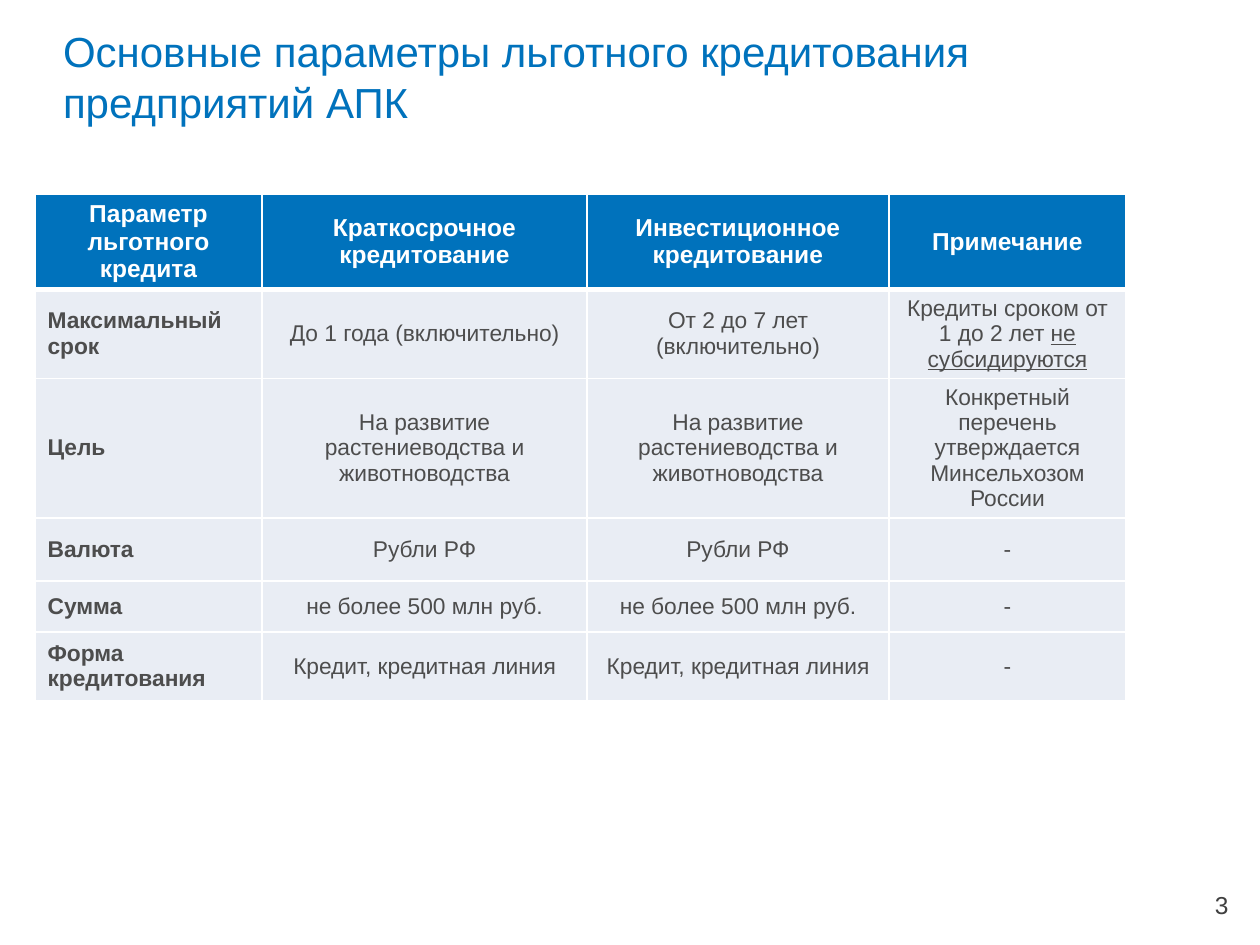
from pptx import Presentation
from pptx.dml.color import RGBColor
from pptx.enum.text import MSO_ANCHOR, PP_ALIGN
from pptx.oxml import parse_xml
from pptx.oxml.ns import nsdecls
from pptx.util import Pt

PX = 914400 // 126
BLUE = RGBColor(0x00, 0x72, 0xBC)
PALE = RGBColor(0xE9, 0xED, 0xF4)
WHITE = RGBColor(0xFF, 0xFF, 0xFF)
GREY = RGBColor(0x4D, 0x4D, 0x4D)
DARK = RGBColor(0x40, 0x40, 0x40)

COLS = [227, 325, 302, 237]
ROWS = [94, 89, 139, 63, 51, 69]
GOAL = "На развитие растениеводства и животноводства"
SUM = "не более 500 млн руб."
FORM = "Кредит, кредитная линия"
CELLS = [
    ["Параметр льготного кредита", "Краткосрочное кредитование",
     "Инвестиционное кредитование", "Примечание"],
    ["Максимальный срок", "До 1 года (включительно)",
     "От 2 до 7 лет (включительно)", "Кредиты сроком от 1 до 2 лет "],
    ["Цель", GOAL, GOAL,
     "Конкретный перечень утверждается Минсельхозом России"],
    ["Валюта", "Рубли РФ", "Рубли РФ", "-"],
    ["Сумма", SUM, SUM, "-"],
    ["Форма кредитования", FORM, FORM, "-"],
]


class Deck:
    font = "Arial"

    def __init__(self, wide, high):
        self.prs = Presentation()
        self.prs.slide_width, self.prs.slide_height = wide * PX, high * PX
        self.slide = self.prs.slides.add_slide(self.prs.slide_layouts[5])

    def style(self, para, size, color, align, bold=False):
        para.alignment = align
        for run in para.runs:
            run.font.name = self.font
            run.font.size = Pt(size)
            run.font.bold = bold
            run.font.color.rgb = color

    def title(self, text, x, y, w, h):
        shape = self.slide.shapes.title
        shape.left, shape.top, shape.width, shape.height = (
            n * PX for n in (x, y, w, h))
        frame = shape.text_frame
        frame.margin_left = frame.margin_right = 0
        frame.margin_top = frame.margin_bottom = 0
        frame.vertical_anchor = MSO_ANCHOR.MIDDLE
        frame.text = text
        self.style(frame.paragraphs[0], 24, BLUE, PP_ALIGN.LEFT)

    def number(self, text, x, y, w, h):
        box = self.slide.shapes.add_textbox(x * PX, y * PX, w * PX, h * PX)
        frame = box.text_frame
        frame.word_wrap = True
        frame.vertical_anchor = MSO_ANCHOR.MIDDLE
        frame.text = text
        self.style(frame.paragraphs[0], 14, DARK, PP_ALIGN.RIGHT)

    def table(self, cells, x, y, cols, rows):
        table = self.slide.shapes.add_table(
            len(rows), len(cols), x * PX, y * PX,
            sum(cols) * PX, sum(rows) * PX).table
        for col, width in zip(table.columns, cols):
            col.width = width * PX
        for row, height in zip(table.rows, rows):
            row.height = height * PX
        for r, line in enumerate(cells):
            for c, text in enumerate(line):
                self.cell(table.cell(r, c), text, r, c)
        return table

    def cell(self, cell, text, r, c):
        head = r == 0
        cell.text = text
        cell.vertical_anchor = MSO_ANCHOR.MIDDLE
        align = PP_ALIGN.CENTER if head or c else PP_ALIGN.LEFT
        self.style(cell.text_frame.paragraphs[0], 14 if head else 13,
                   WHITE if head else GREY, align, head or c == 0)
        self.border(cell, top=3 if r == 1 else 1, bottom=3 if head else 1)
        cell.fill.solid()
        cell.fill.fore_color.rgb = BLUE if head else PALE

    def border(self, cell, top, bottom):
        props = cell._tc.get_or_add_tcPr()
        for side, width in zip("LRTB", (1, 1, top, bottom)):
            props.append(parse_xml(
                f'<a:ln{side} {nsdecls("a")} w="{Pt(width)}"><a:solidFill>'
                f'<a:srgbClr val="{WHITE}"/></a:solidFill></a:ln{side}>'))

    def underline(self, cell, text):
        """Add an underlined run to the end of a body cell."""
        para = cell.text_frame.paragraphs[0]
        run = para.add_run()
        run.text = text
        run.font.underline = True
        self.style(para, 13, GREY, PP_ALIGN.CENTER)


def main():
    deck = Deck(1260, 945)
    deck.title("Основные параметры льготного кредитования предприятий АПК",
               63, 16, 1063, 120)
    table = deck.table(CELLS, 35, 194, COLS, ROWS)
    deck.underline(table.cell(1, 3), "не субсидируются")
    deck.number("3", 948, 880, 293, 50)
    deck.prs.save("out.pptx")


if __name__ == "__main__":
    main()
